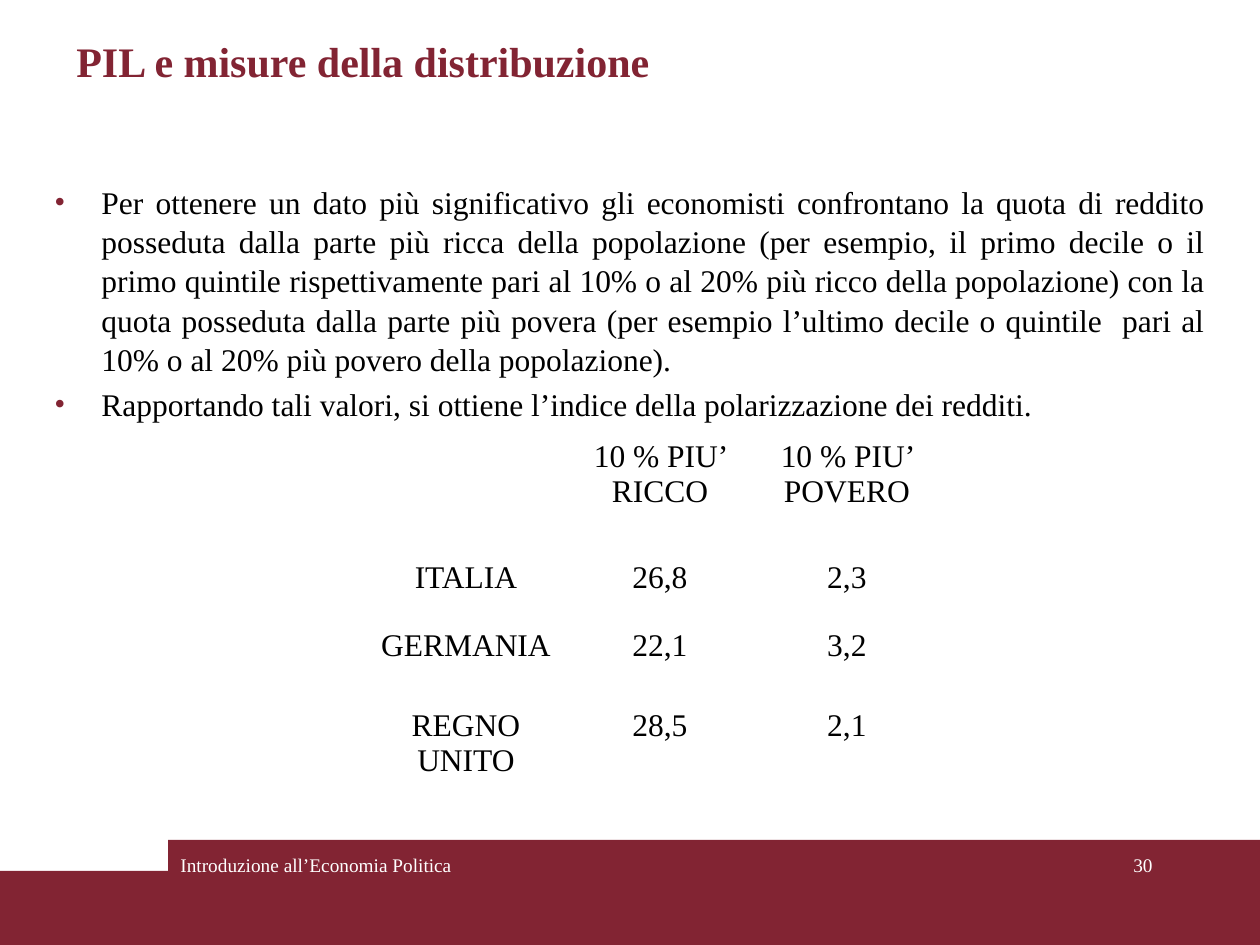
from lxml import etree
from pptx import Presentation
from pptx import util as u
from pptx.dml.color import RGBColor
from pptx.enum import shapes, text
from pptx.oxml.ns import qn

COLORS = {"wine": "822433", "white": "FFFFFF", "black": "000000"}
FONT = "Times New Roman"
ALIGN = text.PP_ALIGN


def px(length):
    return u.Emu(round(length * 914400 / 126))


def rgb(name):
    return RGBColor.from_string(COLORS[name])


def write(paragraph, words, size=18, color="black", bold=False, align=ALIGN.LEFT, line=None):
    paragraph.alignment = align
    paragraph.line_spacing = line
    run = paragraph.add_run()
    run.text = words
    run.font.name = FONT
    run.font.size = u.Pt(size)
    run.font.bold = bold
    run.font.color.rgb = rgb(color)


class Deck:
    def __init__(self, width, height):
        self.presentation = Presentation()
        self.presentation.slide_width = px(width)
        self.presentation.slide_height = px(height)
        self.slide = self.presentation.slides.add_slide(self.presentation.slide_layouts[6])

    def band(self, *box):
        band = self.slide.shapes.add_shape(shapes.MSO_SHAPE.RECTANGLE, *map(px, box))
        band.shadow.inherit = False
        band.fill.solid()
        band.fill.fore_color.rgb = rgb("wine")
        band.line.fill.background()

    def frame(self, box, anchor=text.MSO_ANCHOR.TOP):
        frame = self.slide.shapes.add_textbox(*map(px, box)).text_frame
        frame.word_wrap = True
        frame.vertical_anchor = anchor
        return frame

    def label(self, words, box, anchor=text.MSO_ANCHOR.TOP, **style):
        write(self.frame(box, anchor).paragraphs[0], words, **style)

    def bullets(self, points, box, indent, gap):
        frame = self.frame(box)
        for index, point in enumerate(points):
            paragraph = frame.add_paragraph() if index else frame.paragraphs[0]
            write(paragraph, point, align=ALIGN.JUSTIFY, line=1.04)
            paragraph.space_before = u.Pt(gap)
            props = paragraph._p.get_or_add_pPr()
            props.set("marL", str(px(indent)))
            props.set("indent", str(-px(indent)))
            bullet_color = etree.SubElement(props, qn("a:buClr"))
            etree.SubElement(bullet_color, qn("a:srgbClr"), val=COLORS["wine"])
            etree.SubElement(props, qn("a:buFont"), typeface=FONT)
            etree.SubElement(props, qn("a:buChar"), char="•")

    def border(self, cell):
        props = cell._tc.get_or_add_tcPr()
        for position, side in enumerate(("lnL", "lnR", "lnT", "lnB")):
            line = etree.Element(qn(f"a:{side}"), w=str(u.Pt(0.5)))
            fill = etree.SubElement(line, qn("a:solidFill"))
            etree.SubElement(fill, qn("a:srgbClr"), val=COLORS["white"])
            props.insert(position, line)

    def table(self, rows, left, top, widths, heights):
        box = (left, top, sum(widths), sum(heights))
        table = self.slide.shapes.add_table(len(rows), len(widths), *map(px, box)).table
        table.first_row = table.horz_banding = False
        for column, width in zip(table.columns, widths):
            column.width = px(width)
        for row, height, values in zip(table.rows, heights, rows):
            row.height = px(height)
            for cell, value in zip(row.cells, values):
                cell.fill.background()
                self.border(cell)
                if value:
                    write(cell.text_frame.paragraphs[0], value, align=ALIGN.CENTER)


def main():
    deck = Deck(1260, 945)
    deck.band(0, 871, 1260, 74)
    deck.band(168, 840, 1092, 105)
    deck.label("30", (903, 847, 262, 63), size=11, color="white", align=ALIGN.RIGHT)
    deck.label("PIL e misure della distribuzione", (64, 25, 1022, 71),
               text.MSO_ANCHOR.MIDDLE, size=24, color="wine", bold=True)
    deck.label("Introduzione all’Economia Politica", (168, 847, 412, 82),
               size=11, color="white", align=ALIGN.JUSTIFY)
    deck.bullets([
        "Per ottenere un dato più significativo gli economisti confrontano la quota di reddito "
        "posseduta dalla parte più ricca della popolazione (per esempio, il primo decile o il "
        "primo quintile rispettivamente pari al 10% o al 20% più ricco della popolazione) con la "
        "quota posseduta dalla parte più povera (per esempio l’ultimo decile o quintile  pari al "
        "10% o al 20% più povero della popolazione).",
        "Rapportando tali valori, si ottiene l’indice della polarizzazione dei redditi.",
    ], (42, 175, 1176, 716), indent=47, gap=3.6)
    deck.table([
        ("", "10 % PIU’ RICCO", "10 % PIU’ POVERO"),
        ("ITALIA", "26,8", "2,3"),
        ("GERMANIA", "22,1", "3,2"),
        ("REGNO UNITO", "28,5", "2,1"),
    ], 362, 433, (208, 180, 194), (121, 68, 80, 80))
    deck.presentation.save("out.pptx")


if __name__ == "__main__":
    main()
